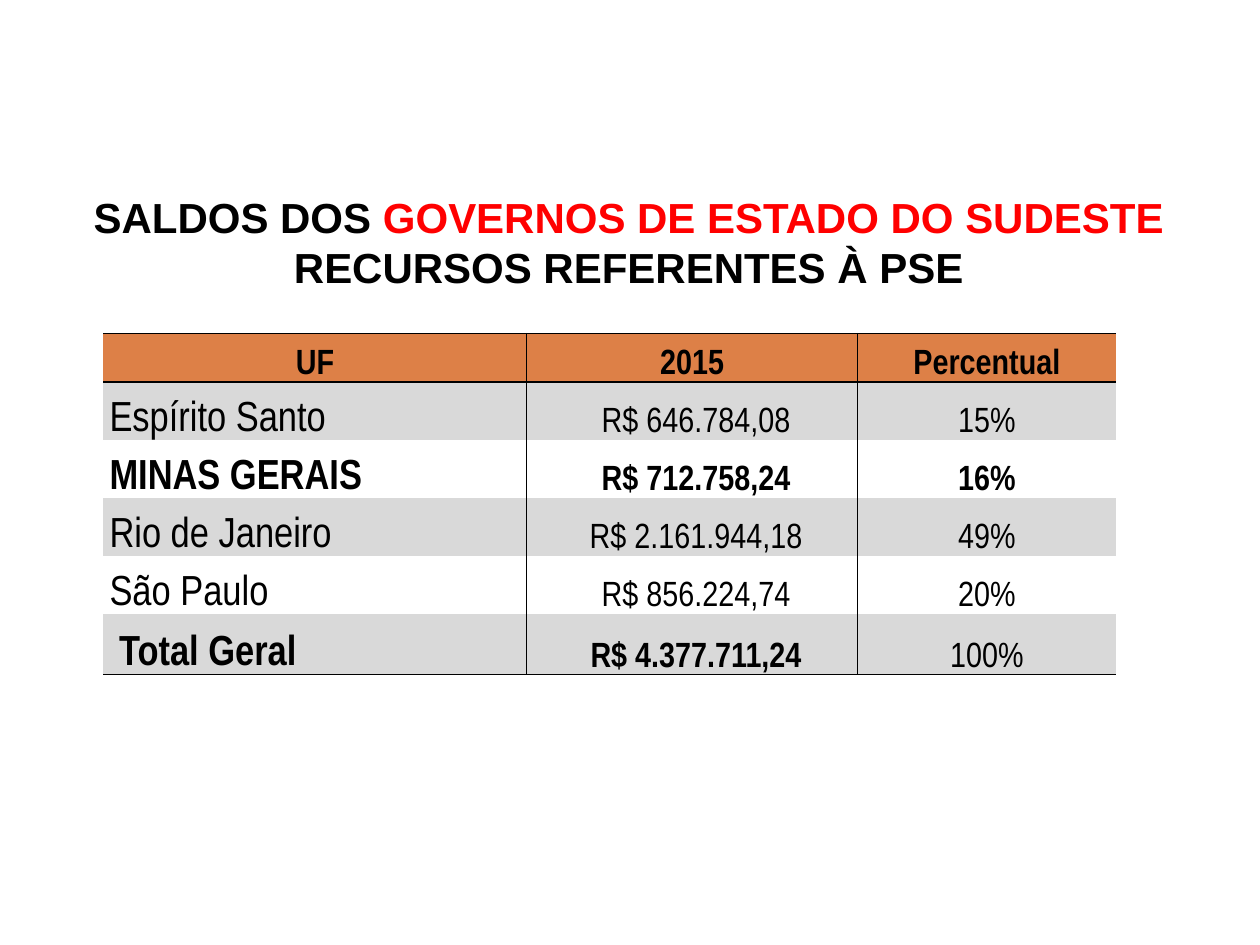
from lxml import etree
from pptx import Presentation
from pptx import util as u
from pptx.dml.color import RGBColor
from pptx.enum import text
from pptx.oxml.ns import qn

Pt = u.Pt
THEME = dict(ink="000000", red="FF0000", head="DD8047", band="D9D9D9",
             title=24, name=24, body=20, font="Arial", slim="Arial Narrow")

TITLE = [
    [("SALDOS DOS ", "ink"), ("GOVERNOS DE ESTADO DO SUDESTE", "red")],
    [("RECURSOS REFERENTES À PSE", "ink")],
]
ROWS = [
    ("UF", "2015", "Percentual"),
    ("Espírito Santo", " R$ 646.784,08", "15%"),
    ("MINAS GERAIS", " R$ 712.758,24", "16%"),
    ("Rio de Janeiro", " R$ 2.161.944,18", "49%"),
    ("São Paulo", " R$ 856.224,74", "20%"),
    (" Total Geral", " R$ 4.377.711,24", "100%"),
]
BOLD = [(1, 1, 1), (0, 0, 0), (1, 1, 1), (0, 0, 0), (0, 0, 0), (1, 1, 0)]
WIDTHS = [242, 189, 148]
HEIGHTS = [27.8, 33.1, 33.1, 33.1, 33.1, 34.56]


def add_run(para, words, size, font, bold, color="ink"):
    run = para.add_run()
    run.text = words
    run.font.size = Pt(size)
    run.font.name = THEME[font]
    run.font.bold = bool(bold)
    run.font.color.rgb = RGBColor.from_string(THEME[color])


def add_title(slide):
    box = slide.shapes.add_textbox(Pt(43.2), Pt(105.8), Pt(632.2), Pt(65.5))
    frame = box.text_frame
    frame.word_wrap = False
    frame.auto_size = text.MSO_AUTO_SIZE.SHAPE_TO_FIT_TEXT
    for i, line in enumerate(TITLE):
        para = frame.add_paragraph() if i else frame.paragraphs[0]
        para.alignment = text.PP_ALIGN.CENTER
        for words, color in line:
            add_run(para, words, THEME["title"], "font", True, color)


def set_edges(cell, edges):
    props = cell._tc.get_or_add_tcPr()
    for side in "LRTB":
        line = etree.SubElement(props, qn("a:ln" + side), w=str(Pt(1)))
        if side in edges:
            fill = etree.SubElement(line, qn("a:solidFill"))
            etree.SubElement(fill, qn("a:srgbClr"), val=THEME["ink"])
        else:
            etree.SubElement(line, qn("a:noFill"))


def set_fill(cell, row):
    if row and row % 2 == 0:
        cell.fill.background()
    else:
        cell.fill.solid()
        color = THEME["band" if row else "head"]
        cell.fill.fore_color.rgb = RGBColor.from_string(color)


def add_grid(slide):
    last, end = len(ROWS) - 1, len(WIDTHS) - 1
    grid = slide.shapes.add_table(
        len(ROWS), len(WIDTHS), Pt(59), Pt(190.6),
        Pt(sum(WIDTHS)), Pt(sum(HEIGHTS))).table
    grid.first_row = grid.horz_banding = False
    for col, width in zip(grid.columns, WIDTHS):
        col.width = Pt(width)
    for r, row in enumerate(ROWS):
        grid.rows[r].height = Pt(HEIGHTS[r])
        for c, words in enumerate(row):
            cell = grid.cell(r, c)
            edges = {"L": c > 0, "R": c < end, "T": r < 2, "B": r in (0, last)}
            set_edges(cell, [side for side, on in edges.items() if on])
            set_fill(cell, r)
            cell.vertical_anchor = text.MSO_ANCHOR.BOTTOM
            cell.margin_left = cell.margin_right = Pt(3.6)
            cell.margin_top = cell.margin_bottom = 0
            name = r > 0 and c == 0
            para = cell.text_frame.paragraphs[0]
            para.line_spacing = 1.15
            para.alignment = text.PP_ALIGN.LEFT if name else text.PP_ALIGN.CENTER
            size = THEME["name" if name else "body"]
            add_run(para, words, size, "slim", BOLD[r][c])


def main():
    deck = Presentation()
    deck.slide_width, deck.slide_height = Pt(720), Pt(540)
    slide = deck.slides.add_slide(deck.slide_layouts[6])
    add_title(slide)
    add_grid(slide)
    deck.save("out.pptx")


if __name__ == "__main__":
    main()
